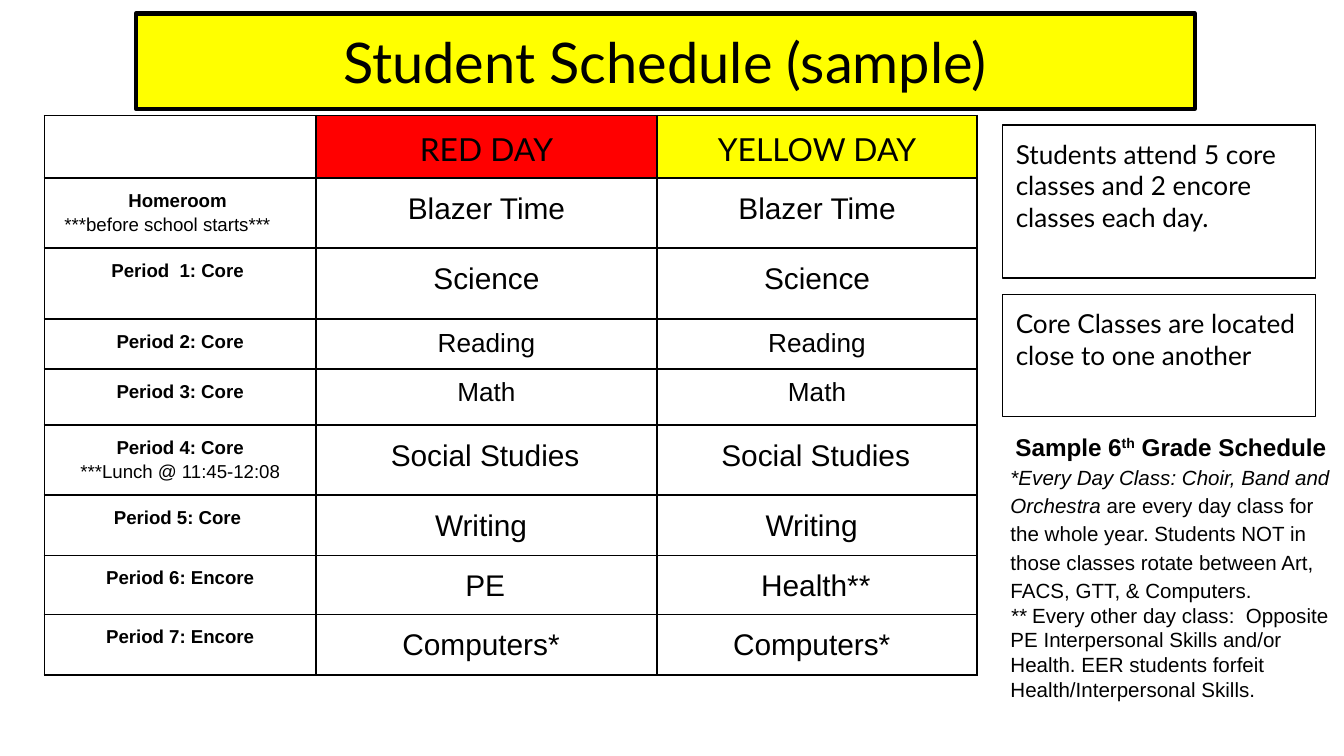
from lxml.etree import SubElement
from pptx import Presentation
from pptx.dml.color import RGBColor
from pptx.enum.shapes import MSO_SHAPE
from pptx.enum.text import MSO_ANCHOR, MSO_AUTO_SIZE, PP_ALIGN
from pptx.oxml.ns import qn
from pptx.util import Inches, Pt

BLACK = RGBColor(0, 0, 0)
RED = RGBColor(255, 0, 0)
YELLOW = RGBColor(255, 255, 0)
CENTER, LEFT = PP_ALIGN.CENTER, PP_ALIGN.LEFT

TITLE = "Student Schedule (sample)"
DAYS = [("RED DAY", RED), ("YELLOW DAY", YELLOW)]
HEADER_HEIGHT = 0.46
PERIODS = [
    ("Homeroom ", ("***before school starts***", LEFT), "Blazer Time", "Blazer Time", 0.52),
    ("Period  1: Core ", None, "Science", "Science", 0.53),
    ("Period 2: Core", None, "Reading", "Reading", 0.37),
    ("Period 3: Core", None, "Math", "Math", 0.42),
    ("Period 4: Core", ("***Lunch @ 11:45-12:08", CENTER), " Social Studies", " Social Studies", 0.52),
    ("Period 5: Core ", None, "Writing", "Writing", 0.45),
    ("Period 6: Encore", None, " PE", " Health**", 0.44),
    ("Period 7: Encore", None, "Computers*", "Computers*", 0.45),
]
COLUMN_WIDTHS = [2.02, 2.54, 2.38]
INDENTED_CLASSES = {"Blazer Time", "Science"}
COMPACT_CLASSES = {"Reading", "Math"}
CALLOUTS = [
    ("Students attend 5 core classes and 2 encore classes each day.", 0.93, 1.14),
    ("Core Classes are located close to one another", 2.19, 0.91),
]
NOTES = [
    (CENTER, 1.15, 13, [("Sample 6", {"bold": True}), ("th", {"bold": True, "raised": True}),
                        (" Grade Schedule", {"bold": True})]),
    (LEFT, 1.15, 11, [("*Every Day Class: Choir, Band and Orchestra", {"italic": True}),
                      (" are every day class for the whole year. Students NOT in those classes "
                       "rotate between Art, FACS, GTT, & Computers.", {})]),
    (LEFT, 1.0, 11, [("**", {"italic": True}),
                     (" Every other day class:  Opposite PE Interpersonal Skills and/or Health. "
                      "EER students forfeit Health/Interpersonal Skills.", {})]),
]


def add_run(paragraph, text, size, name="Arial", raised=False, **emphasis):
    run = paragraph.add_run()
    run.text = text
    for attribute, value in {"size": Pt(size), "name": name, **emphasis}.items():
        setattr(run.font, attribute, value)
    run.font.color.rgb = BLACK
    if raised:
        run.font._element.set("baseline", "30000")


def set_frame(frame, inset, anchor):
    margins = {f"margin_{side}": Inches(inset) for side in ("left", "top", "right", "bottom")}
    for attribute, value in {"word_wrap": True, "auto_size": MSO_AUTO_SIZE.NONE,
                             "vertical_anchor": anchor, **margins}.items():
        setattr(frame, attribute, value)


def outline(shape, width):
    shape.line.color.rgb = BLACK
    shape.line.width = Pt(width)


def format_cell(cell, fill=None):
    for side in ("left", "top", "right", "bottom"):
        setattr(cell, f"margin_{side}", Inches(0.07))
    properties = cell._tc.get_or_add_tcPr()
    for side in ("lnL", "lnR", "lnT", "lnB"):
        border = SubElement(properties, qn(f"a:{side}"), w=str(Pt(1)))
        SubElement(SubElement(border, qn("a:solidFill")), qn("a:srgbClr"), val=str(BLACK))
    if fill is None:
        cell.fill.background()
    else:
        cell.fill.solid()
        cell.fill.fore_color.rgb = fill


def write_line(paragraph, text, size, align=CENTER, indented=True, compact=False, **font):
    paragraph.alignment = align
    paragraph.line_spacing = 1.0 if compact else 1.15
    if not compact:
        properties = paragraph._p.get_or_add_pPr()
        properties.set("marR", str(Inches(0.08)))
        properties.set("marL", str(Inches(0.08 if indented else 0)))
    add_run(paragraph, text, size, **font)


def add_schedule(slide):
    heights = [HEADER_HEIGHT] + [period[-1] for period in PERIODS]
    frame = slide.shapes.add_table(len(heights), len(COLUMN_WIDTHS), Inches(0.33), Inches(0.86),
                                   Inches(sum(COLUMN_WIDTHS)), Inches(sum(heights)))
    table = frame.table
    table.first_row = table.horz_banding = False
    for column, width in zip(table.columns, COLUMN_WIDTHS):
        column.width = Inches(width)
    for row, height in zip(table.rows, heights):
        row.height = Inches(height)

    fills = [None] + [color for _, color in DAYS]
    for index, cell in enumerate(table.iter_cells()):
        format_cell(cell, fills[index] if index < len(fills) else None)
    for column, (day, _) in enumerate(DAYS, 1):
        write_line(table.cell(0, column).text_frame.paragraphs[0], day, 17, name="Lato")
    for row, (period, remark, *classes, _) in enumerate(PERIODS, 1):
        label = table.cell(row, 0).text_frame
        write_line(label.paragraphs[0], period, 10, bold=True)
        if remark:
            write_line(label.add_paragraph(), remark[0], 10, remark[1])
        for column, subject in enumerate(classes, 1):
            compact = subject in COMPACT_CLASSES
            write_line(table.cell(row, column).text_frame.paragraphs[0], subject,
                       14 if compact else 16, indented=subject in INDENTED_CLASSES,
                       compact=compact)


def add_callout(slide, text, top, height):
    callout = slide.shapes.add_shape(MSO_SHAPE.RECTANGLE, Inches(7.46), Inches(top),
                                     Inches(2.33), Inches(height))
    callout.shadow.inherit = False
    callout.fill.background()
    outline(callout, 0.75)
    set_frame(callout.text_frame, 0.1, MSO_ANCHOR.TOP)
    paragraph = callout.text_frame.paragraphs[0]
    paragraph.alignment = LEFT
    add_run(paragraph, text, 14, "Lato")


def add_notes(slide):
    frame = slide.shapes.add_textbox(Inches(7.42), Inches(2.87), Inches(2.58),
                                     Inches(2.66)).text_frame
    set_frame(frame, 0.1, MSO_ANCHOR.MIDDLE)
    for index, (align, spacing, size, runs) in enumerate(NOTES):
        paragraph = frame.add_paragraph() if index else frame.paragraphs[0]
        paragraph.alignment = align
        paragraph.line_spacing = spacing
        for text, emphasis in runs:
            add_run(paragraph, text, size, **emphasis)


def add_title(slide):
    title = slide.shapes.title
    for attribute, value in {"left": 1.01, "top": 0.1, "width": 7.88, "height": 0.71}.items():
        setattr(title, attribute, Inches(value))
    title.fill.solid()
    title.fill.fore_color.rgb = YELLOW
    outline(title, 2.25)
    set_frame(title.text_frame, 0.1, MSO_ANCHOR.MIDDLE)
    paragraph = title.text_frame.paragraphs[0]
    paragraph.alignment = CENTER
    add_run(paragraph, TITLE, 30, "Lato")


def main():
    presentation = Presentation()
    presentation.slide_width = Inches(10)
    presentation.slide_height = Inches(10) * 9 // 16
    slide = presentation.slides.add_slide(presentation.slide_layouts[5])
    add_title(slide)
    add_schedule(slide)
    add_notes(slide)
    for callout in CALLOUTS:
        add_callout(slide, *callout)
    presentation.save("out.pptx")


if __name__ == "__main__":
    main()
